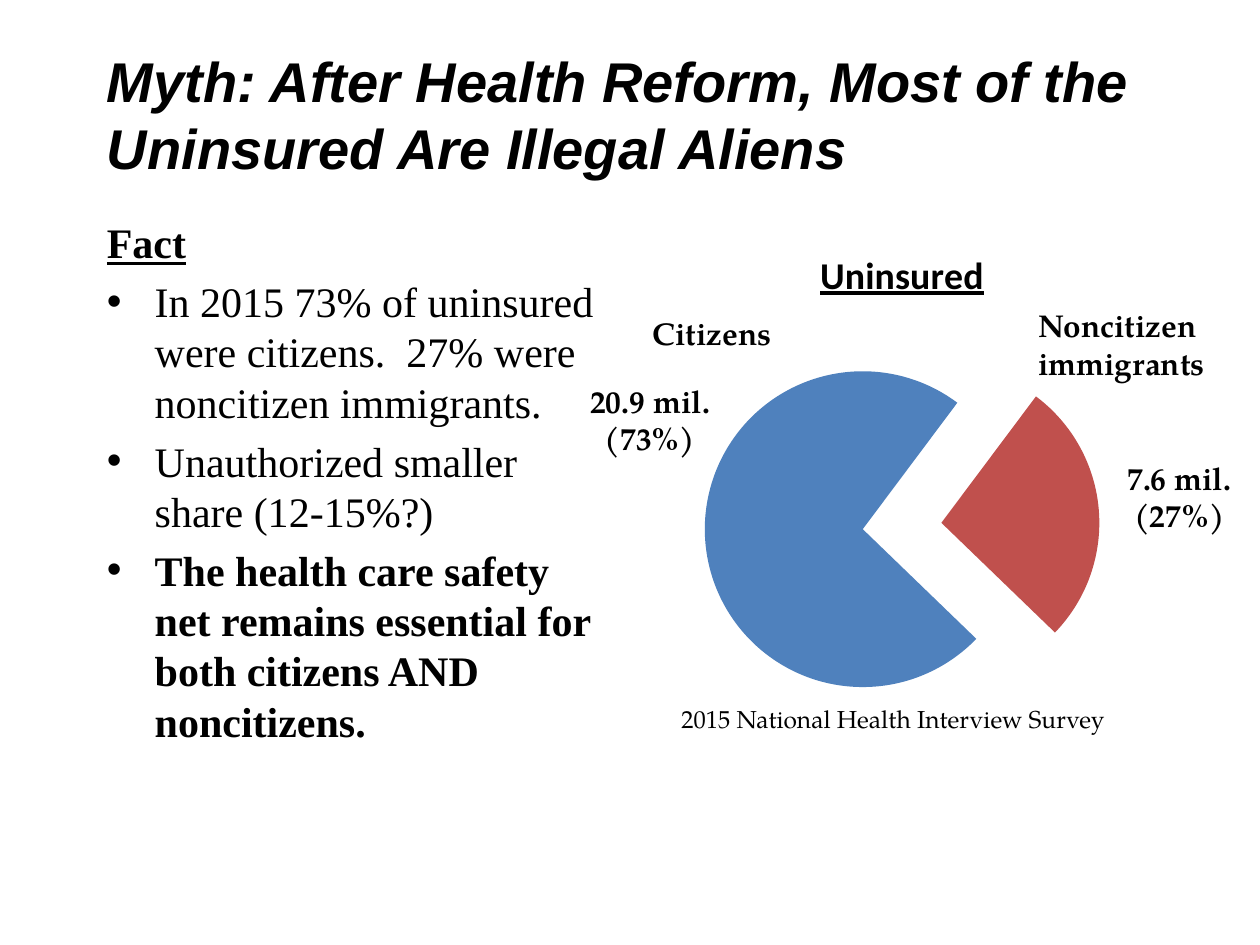
import pptx
import pptx.util
import pptx.dml.color
import pptx.chart.data
import pptx.enum.chart
import pptx.enum.text
import lxml.etree

Inches = pptx.util.Inches
Align = pptx.enum.text.PP_ALIGN

THEME = {
    "ink": "000000",
    "slices": ["4F81BD", "C0504D"],
    "heading": {"name": "Arial", "size": 32, "bold": True, "italic": True},
    "lead": {"name": "Times New Roman", "size": 24, "bold": True, "underline": True},
    "body": {"name": "Times New Roman", "size": 24},
    "strong": {"name": "Times New Roman", "size": 24, "bold": True},
    "label": {"name": "TeX Gyre Pagella", "size": 18, "bold": True},
    "source": {"name": "TeX Gyre Pagella", "size": 14},
    "chart": {"name": "Calibri", "size": 18},
    "chart_title": {"name": "Calibri", "size": 21.6, "bold": True, "underline": True},
}

HEADING = "Myth: After Health Reform, Most of the Uninsured Are Illegal Aliens"
FACTS = [
    ("Fact", "lead", False),
    ("In 2015 73% of uninsured were citizens.  27% were noncitizen immigrants.", "body", True),
    ("Unauthorized smaller share (12-15%?)", "body", True),
    ("The health care safety net remains essential for both citizens AND noncitizens.", "strong", True),
]
PIE = {"title": "Uninsured", "categories": ["1", "2"], "values": [73, 27], "start": 134, "explosion": 25}
LABELS = [
    (["Citizens"], (5.08, 2.44, 1.16, 0.4), "label", Align.LEFT),
    (["Noncitizen", "immigrants"], (8.14, 2.38, 1.53, 0.71), "label", Align.LEFT),
    (["20.9 mil.", "(73%)"], (4.58, 2.98, 1.16, 0.71), "label", Align.CENTER),
    (["2015 National Health Interview Survey"], (5.31, 5.54, 3.6, 0.34), "source", Align.LEFT),
    (["7.6 mil.", "(27%)"], (8.84, 3.59, 1.04, 0.71), "label", Align.CENTER),
]
HEADING_AREA = (0.75, 0.32, 8.48, 1.08)
FACTS_AREA = (0.75, 1.67, 4.16, 4.29)
CHART_AREA = (5.08, 1.78, 4.16, 4.1)
INDENT = 0.38
FACT_GAP = 4.8


def format_font(font, style):
    for key, value in THEME[style].items():
        setattr(font, key, pptx.util.Pt(value) if key == "size" else value)
    font.color.rgb = pptx.dml.color.RGBColor.from_string(THEME["ink"])


def add_text(page, area, lines, wrap=True, align=Align.LEFT):
    box = page.shapes.add_textbox(*map(Inches, area))
    frame = box.text_frame
    frame.word_wrap = wrap
    if not wrap:
        frame.auto_size = pptx.enum.text.MSO_AUTO_SIZE.SHAPE_TO_FIT_TEXT
    for index, (text, style) in enumerate(lines):
        para = frame.paragraphs[0] if index == 0 else frame.add_paragraph()
        para.alignment = align
        span = para.add_run()
        span.text = text
        format_font(span.font, style)
    return frame


def add_bullet(para):
    properties = para._p.get_or_add_pPr()
    properties.set("marL", str(Inches(INDENT)))
    properties.set("indent", str(-Inches(INDENT)))
    for tag, key, value in [("a:buFont", "typeface", "Arial"), ("a:buChar", "char", "•")]:
        lxml.etree.SubElement(properties, pptx.oxml.ns.qn(tag)).set(key, value)


def add_pie(page):
    data = pptx.chart.data.CategoryChartData()
    data.categories = PIE["categories"]
    data.add_series(PIE["title"], PIE["values"])
    kind = pptx.enum.chart.XL_CHART_TYPE.PIE
    chart = page.shapes.add_chart(kind, *map(Inches, CHART_AREA), data).chart
    format_font(chart.font, "chart")
    chart.has_legend = False
    chart.has_title = True
    span = chart.chart_title.text_frame.paragraphs[0].add_run()
    span.text = PIE["title"]
    format_font(span.font, "chart_title")
    plot = chart.plots[0]
    plot.vary_by_categories = True
    series = plot.series[0]
    for index, color in enumerate(THEME["slices"]):
        fill = series.points[index].format.fill
        fill.solid()
        fill.fore_color.rgb = pptx.dml.color.RGBColor.from_string(color)
    qn = pptx.oxml.ns.qn
    explosion = lxml.etree.Element(qn("c:explosion"))
    explosion.set("val", str(PIE["explosion"]))
    series._element.find(qn("c:dPt")).addprevious(explosion)
    angle = plot._element.find(qn("c:firstSliceAng"))
    if angle is None:
        angle = lxml.etree.SubElement(plot._element, qn("c:firstSliceAng"))
    angle.set("val", str(PIE["start"]))


def main():
    deck = pptx.Presentation()
    deck.slide_width, deck.slide_height = Inches(10), Inches(7.5)
    page = deck.slides.add_slide(deck.slide_layouts[6])
    add_text(page, HEADING_AREA, [(HEADING, "heading")])
    facts = add_text(page, FACTS_AREA, [(text, style) for text, style, _ in FACTS])
    for para, (_, _, bulleted) in zip(facts.paragraphs, FACTS):
        para.space_before = pptx.util.Pt(FACT_GAP)
        if bulleted:
            add_bullet(para)
    add_pie(page)
    for lines, area, style, align in LABELS:
        add_text(page, area, [(line, style) for line in lines], False, align)
    deck.save("out.pptx")


if __name__ == "__main__":
    main()
